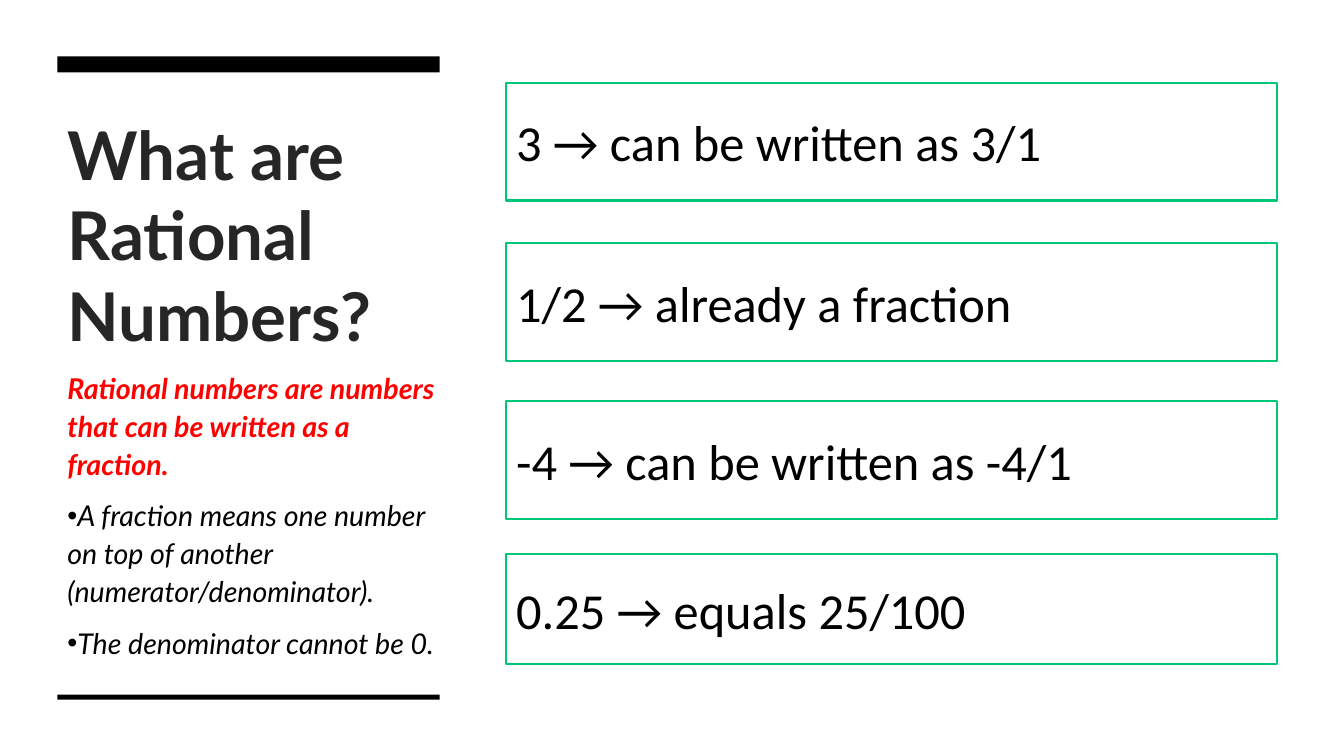
from lxml import etree
from pptx import Presentation
from pptx.dml.color import RGBColor
from pptx.enum.shapes import MSO_SHAPE
from pptx.enum.text import MSO_ANCHOR, MSO_AUTO_SIZE, PP_ALIGN
from pptx.oxml.ns import qn
from pptx.util import Inches, Pt

RECT = MSO_SHAPE.RECTANGLE
TOP, MIDDLE = MSO_ANCHOR.TOP, MSO_ANCHOR.MIDDLE
NO_FIT = MSO_AUTO_SIZE.NONE
LEFT = PP_ALIGN.LEFT
COLORS = {"bar": "000000", "title": "262626", "key": "FF0000",
          "text": "000000", "card": "FFFFFF", "border": "00C777"}
SIDE_X, SIDE_W = 0.57, 3.79
CARD_X, CARD_W = 5.02, 7.65


def add_box(x, y, w, h, fill):
    sp = s.shapes.add_shape(RECT, Inches(x), Inches(y), Inches(w), Inches(h))
    sp.shadow.inherit = False
    sp.fill.solid()
    sp.fill.fore_color.rgb = RGBColor.from_string(COLORS[fill])
    sp.line.fill.background()
    return sp


def style(p, font, size, color, bold=False, italic=False):
    p.alignment = LEFT
    for r in p.runs:
        r.font.name = font
        r.font.size = Pt(size)
        r.font.bold = bold
        r.font.italic = italic
        r.font.color.rgb = RGBColor.from_string(COLORS[color])


prs = Presentation()
prs.slide_width, prs.slide_height = Inches(13.33), Inches(7.5)
s = prs.slides.add_slide(prs.slide_layouts[5])

title = s.shapes.title
title.left, title.top = Inches(SIDE_X), Inches(1.07)
title.width, title.height = Inches(SIDE_W), Inches(2.68)
tf = title.text_frame
tf.text = "What are Rational Numbers?"
tf.word_wrap = True
tf.auto_size = NO_FIT
tf.vertical_anchor = TOP
style(tf.paragraphs[0], "Lato", 48, "title", bold=True)

notes = [
    ("Rational numbers are numbers that can be written as a fraction.", True),
    ("A fraction means one number on top of another (numerator/denominator).", False),
    ("The denominator cannot be 0.", False),
]
body = s.shapes.add_textbox(Inches(SIDE_X), Inches(3.6), Inches(4.05), Inches(3.09))
tf = body.text_frame
tf.word_wrap = True
for i, (text, key) in enumerate(notes):
    p = tf.paragraphs[0] if i == 0 else tf.add_paragraph()
    p.text = text
    p.line_spacing = 1.1
    p.space_before = Pt(10)
    style(p, "Lato", 20.4, "key" if key else "text", bold=key, italic=True)
    if not key:
        pPr = p._p.get_or_add_pPr()
        etree.SubElement(pPr, qn("a:buFont")).set("typeface", "Arial")
        etree.SubElement(pPr, qn("a:buChar")).set("char", "•")

for y, h in [(0.56, 0.16), (6.89, 0.05)]:
    add_box(SIDE_X, y, SIDE_W, h, "bar")

examples = [
    (0.82, 1.17, "3 → can be written as 3/1"),
    (2.41, 1.17, "1/2 → already a fraction"),
    (3.98, 1.17, "-4 → can be written as -4/1"),
    (5.5, 1.09, "0.25 → equals 25/100"),
]
for y, h, text in examples:
    card = add_box(CARD_X, y, CARD_W, h, "card")
    card.line.color.rgb = RGBColor.from_string(COLORS["border"])
    card.line.width = Pt(1.5)
    tf = card.text_frame
    tf.text = text
    tf.word_wrap = True
    tf.vertical_anchor = MIDDLE
    style(tf.paragraphs[0], "Calibri", 36, "text")

prs.save("out.pptx")
